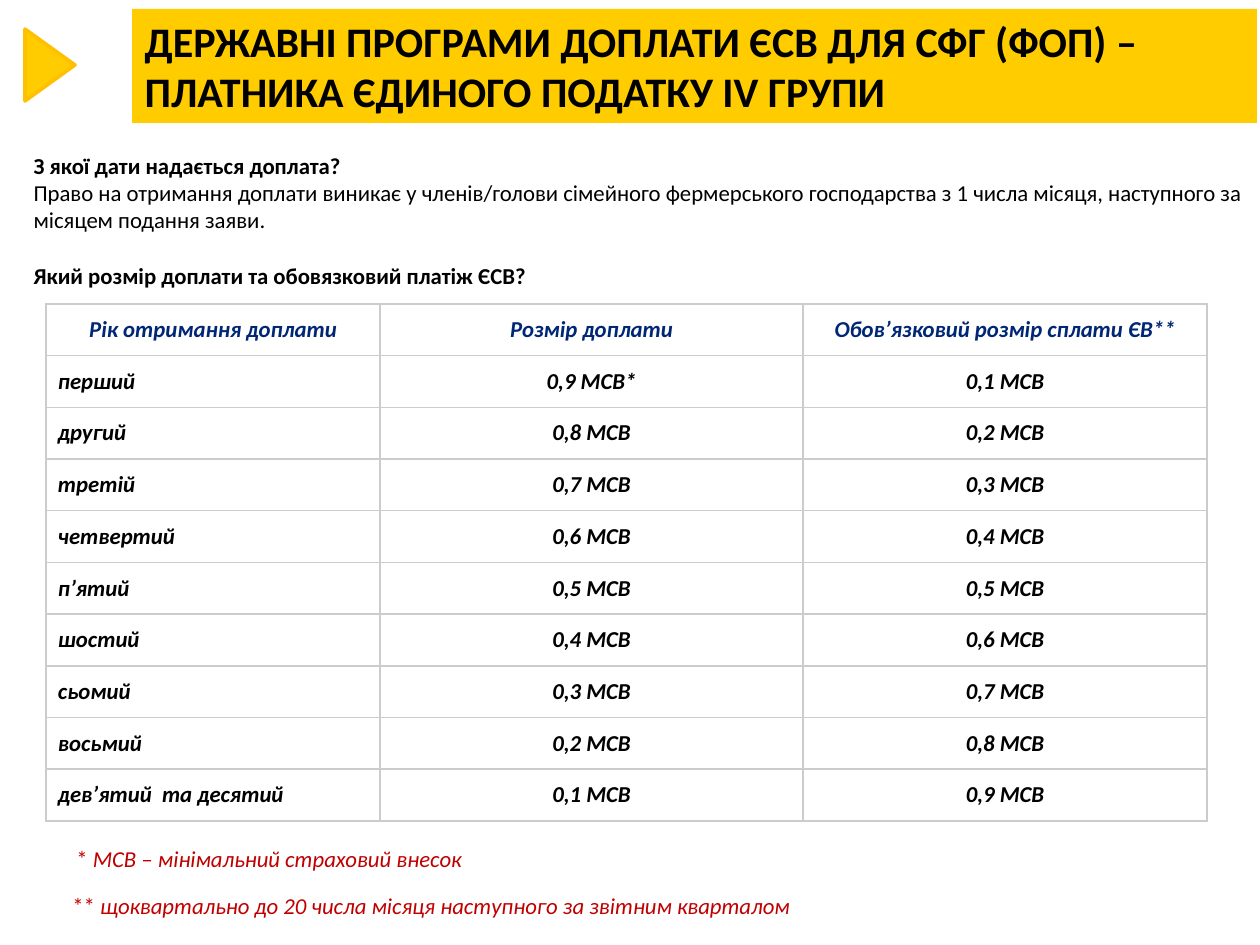
from pptx import Presentation
from pptx.dml.color import RGBColor
from pptx.enum.shapes import MSO_SHAPE as SHAPE
from pptx.enum.text import MSO_ANCHOR as ANCHOR, MSO_AUTO_SIZE as AUTO_SIZE, PP_ALIGN as ALIGN
from pptx.oxml import parse_xml
from pptx.oxml.ns import nsdecls
from pptx.util import Emu, Pt

SCALE = 914400 / 126  # EMU per px


def box(*lengths):
    return [Emu(round(length * SCALE)) for length in lengths]


def add_run(paragraph, text, color="000000", size=13, bold=False, italic=False):
    run = paragraph.add_run()
    run.text = text
    run.font.name = "Calibri"
    run.font.size = Pt(size)
    run.font.bold = bold
    run.font.italic = italic
    run.font.color.rgb = RGBColor.from_string(color)


presentation = Presentation()
presentation.slide_width, presentation.slide_height = box(1260, 945)
slide = presentation.slides.add_slide(presentation.slide_layouts[1])

# Title band
title = slide.shapes.title
title.left, title.top, title.width, title.height = box(132, 9, 1125, 114)
title.fill.solid()
title.fill.fore_color.rgb = RGBColor.from_string("FFCC00")
title.text_frame.auto_size = AUTO_SIZE.NONE
title.text_frame.vertical_anchor = ANCHOR.TOP
paragraph = title.text_frame.paragraphs[0]
paragraph.alignment = ALIGN.LEFT
add_run(paragraph, "ДЕРЖАВНІ ПРОГРАМИ ДОПЛАТИ ЄСВ ДЛЯ СФГ (ФОП) – "
        "ПЛАТНИКА ЄДИНОГО ПОДАТКУ IV ГРУПИ", size=24, bold=True)

# Triangle marker beside the title
marker = slide.shapes.add_shape(SHAPE.ISOSCELES_TRIANGLE, *box(14, 40, 72, 50))
marker.rotation = 90
marker.shadow.inherit = False
marker.fill.solid()
marker.fill.fore_color.rgb = RGBColor.from_string("FFCC00")
marker.line.color.rgb = RGBColor.from_string("FFC000")
marker.line.width = Pt(2)

# Questions and answer: text, bold, space before in points
body = slide.placeholders[1]
body.left, body.top, body.width, body.height = box(21, 145, 1240, 150)
body.text_frame.auto_size = AUTO_SIZE.NONE
questions = [
    ("З якої дати надається доплата?", True, 0),
    ("Право на отримання доплати виникає у членів/голови сімейного фермерського "
     "господарства з 1\u00a0числа місяця, наступного за місяцем подання заяви.", False, 0),
    ("Який розмір доплати та обовязковий платіж ЄСВ?", True, 16),
]
for index, (text, bold, space) in enumerate(questions):
    paragraph = body.text_frame.paragraphs[0] if index == 0 else body.text_frame.add_paragraph()
    paragraph.space_before = Pt(space)
    properties = paragraph._p.get_or_add_pPr()
    properties.set("marL", "0")
    properties.set("indent", "0")
    properties.append(parse_xml(f"<a:buNone {nsdecls('a')}/>"))
    add_run(paragraph, text, bold=bold)

# Table: the supplement falls by 0,1 a year while the payment rises
years = ["перший", "другий", "третій", "четвертий", "п’ятий", "шостий",
         "сьомий", "восьмий", "дев’ятий\u00a0 та десятий"]
rows = [["Рік отримання доплати", "Розмір доплати", "Обов’язковий розмір сплати ЄВ**"]]
for number, year in enumerate(years, start=1):
    star = "*" if number == 1 else ""
    rows.append([year, f"0,{10 - number} МСВ{star}", f"0,{number} МСВ"])

table = slide.shapes.add_table(len(rows), 3, *box(46, 304, 1161, 510)).table
table.first_row = False
table.horz_banding = False
for column, width in zip(table.columns, box(334, 423, 404)):
    column.width = width
for row_index, row in enumerate(rows):
    table.rows[row_index].height = box(51)[0]
    for column_index, text in enumerate(row):
        cell = table.cell(row_index, column_index)
        cell.margin_left, cell.margin_top, cell.margin_right, cell.margin_bottom = box(12, 12, 12, 12)
        header = row_index == 0
        paragraph = cell.text_frame.paragraphs[0]
        paragraph.alignment = ALIGN.CENTER if header or column_index else ALIGN.JUSTIFY
        add_run(paragraph, text, "002776" if header else "000000", bold=True, italic=True)
        properties = cell._tc.get_or_add_tcPr()
        for side in ("lnL", "lnR", "lnT", "lnB"):
            properties.append(parse_xml(
                f'<a:{side} {nsdecls("a")} w="{Pt(1)}"><a:solidFill>'
                f'<a:srgbClr val="CCCCCC"/></a:solidFill></a:{side}>'))
        cell.fill.background()

# Footnotes
footnotes = [
    (64, 839, 1160, "* ", "МСВ – мінімальний страховий внесок"),
    (60, 886, 1184, "** ", "щоквартально до 20 числа місяця наступного за звітним кварталом"),
]
for left, top, width, mark, text in footnotes:
    text_frame = slide.shapes.add_textbox(*box(left, top, width, 40)).text_frame
    text_frame.word_wrap = True
    add_run(text_frame.paragraphs[0], mark, "C00000")
    add_run(text_frame.paragraphs[0], text, "C00000", italic=True)

presentation.save("out.pptx")
